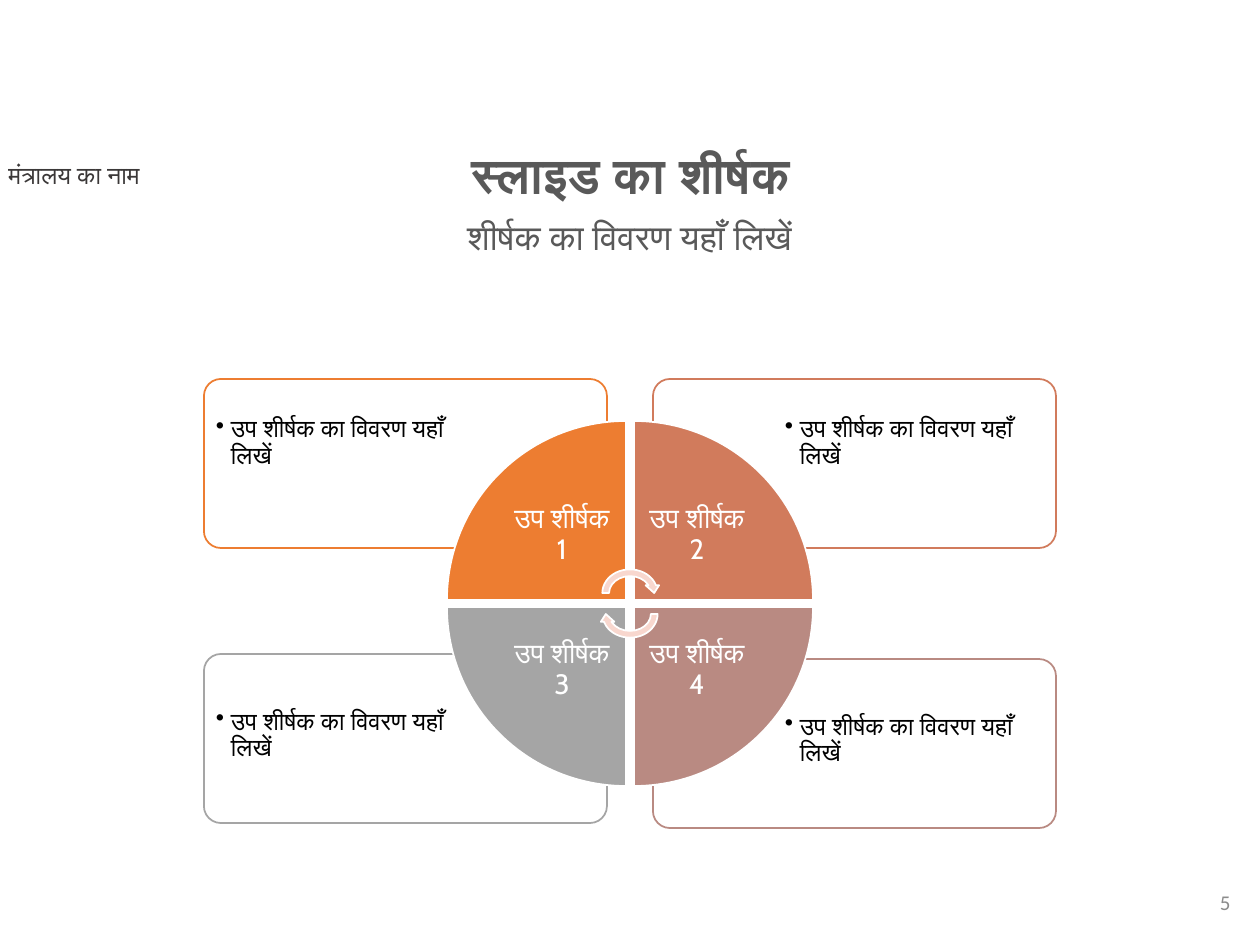
import pptx
import pptx.dml.color
import pptx.enum.shapes
import pptx.enum.text
import pptx.oxml.ns
import pptx.util
from lxml import etree

RGB = pptx.dml.color.RGBColor
SHAPE = pptx.enum.shapes.MSO_SHAPE
ALIGN = pptx.enum.text.PP_ALIGN
ANCHOR = pptx.enum.text.MSO_ANCHOR

SCALE = 914400 / 126  # EMU per px
WHITE = RGB(0xFF, 0xFF, 0xFF)
BLACK = RGB(0x00, 0x00, 0x00)
DARK = RGB(0x3B, 0x38, 0x38)
TITLE = RGB(0x59, 0x59, 0x59)
NUMBER = RGB(0x8C, 0x8C, 0x8C)
ORANGE = RGB(0xED, 0x7D, 0x31)
CORAL = RGB(0xD1, 0x7B, 0x5C)
GRAY = RGB(0xA5, 0xA5, 0xA5)
ROSE = RGB(0xB9, 0x8A, 0x82)
PEACH = RGB(0xF8, 0xD7, 0xCE)

prs = pptx.Presentation()
prs.slide_width = pptx.util.Inches(10)
prs.slide_height = pptx.util.Inches(7.5)
s = prs.slides.add_slide(prs.slide_layouts[6])


def add_text(text, box, size, color, font="Calibri", bold=False, align=ALIGN.LEFT,
             anchor=ANCHOR.TOP, inset=None, spacing=None, bullet=False):
    tf = s.shapes.add_textbox(*[round(v * SCALE) for v in box]).text_frame
    tf.word_wrap = True
    tf.vertical_anchor = anchor
    if inset is not None:
        tf.margin_left = tf.margin_right = round(inset * SCALE)
        tf.margin_top = tf.margin_bottom = round(inset * SCALE)
    p = tf.paragraphs[0]
    p.alignment = align
    if spacing:
        p.line_spacing = spacing
    if bullet:
        pPr = p._p.get_or_add_pPr()
        pPr.set("marL", str(round(15 * SCALE)))
        pPr.set("indent", str(round(-15 * SCALE)))
        etree.SubElement(pPr, pptx.oxml.ns.qn("a:buChar")).set("char", "•")
    r = p.add_run()
    r.text = text
    r.font.name = font
    r.font.size = pptx.util.Pt(size)
    r.font.bold = bold
    r.font.color.rgb = color


def add_shape(kind, box, fill, line, rotation=0):
    sp = s.shapes.add_shape(kind, *[round(v * SCALE) for v in box])
    sp.shadow.inherit = False
    sp.rotation = rotation
    sp.fill.solid()
    sp.fill.fore_color.rgb = fill
    sp.line.color.rgb = line
    sp.line.width = pptx.util.Pt(1)
    return sp


add_text("मंत्रालय का नाम", (-4, 154, 275, 43), 14, DARK)

# number, column, row, colour, wedge rotation, top of the detail box
quadrants = [
    (1, 0, 0, ORANGE, 0, 379),
    (2, 1, 0, CORAL, 90, 379),
    (4, 1, 1, ROSE, 180, 659),
    (3, 0, 1, GRAY, 270, 654),
]

for number, col, row, color, rotation, top in quadrants:
    sp = add_shape(SHAPE.ROUNDED_RECTANGLE, ((204, 653)[col], top, 403, 169), WHITE, color)
    sp.adjustments[0] = 0.1
    add_text("उप शीर्षक का विवरण यहाँ लिखें",
             ((208, 777)[col], top + (4, 47)[row], 275, 120), 14, BLACK, font="Cabin",
             anchor=(ANCHOR.MIDDLE, ANCHOR.TOP)[row], inset=8, spacing=0.9, bullet=True)

for number, col, row, color, rotation, top in quadrants:
    add_shape(SHAPE.PIE_WEDGE, ((447, 634)[col], (421, 607)[row], 179, 179),
              color, WHITE, rotation)
    add_text(f"उप शीर्षक {number}", ((499, 634)[col], (472, 607)[row], 126, 126), 16, WHITE,
             font="Cabin", align=ALIGN.CENTER, anchor=ANCHOR.MIDDLE, inset=15, spacing=0.9)

for top, rotation in ((566, 0), (587, 180)):
    add_shape(SHAPE.CIRCULAR_ARROW, (599, top, 62, 54), PEACH, WHITE, rotation)

add_text("5", (960, 877, 283, 50), 12, NUMBER, align=ALIGN.RIGHT, anchor=ANCHOR.MIDDLE)
add_text("शीर्षक का विवरण यहाँ लिखें", (184, 214, 891, 79), 20, TITLE,
         align=ALIGN.CENTER, spacing=0.9)
add_text("स्लाइड का शीर्षक", (234, 145, 793, 59), 28, TITLE, bold=True,
         align=ALIGN.CENTER, spacing=0.9)

prs.save("out.pptx")
